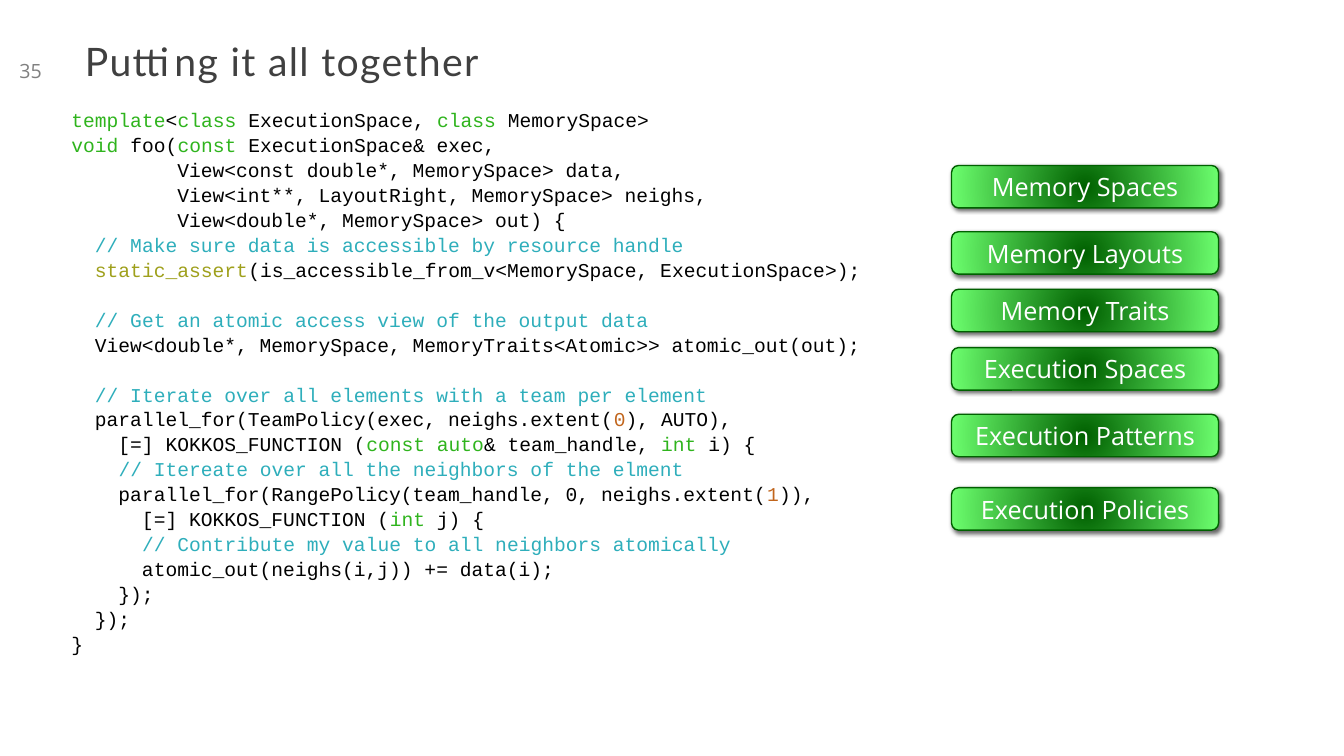
from dataclasses import dataclass

from lxml import etree
from pptx import Presentation
from pptx.dml.color import RGBColor
from pptx.enum.shapes import MSO_SHAPE
from pptx.enum.text import MSO_ANCHOR, PP_ALIGN
from pptx.oxml import parse_xml
from pptx.oxml.ns import nsdecls, qn
from pptx.util import Cm, Pt

ROUNDED = MSO_SHAPE.ROUNDED_RECTANGLE
TOP, MIDDLE = MSO_ANCHOR.TOP, MSO_ANCHOR.MIDDLE
LEFT, CENTER = PP_ALIGN.LEFT, PP_ALIGN.CENTER


@dataclass(frozen=True)
class Theme:
    title_font: str = "Lato"
    body_font: str = "Open Sans"
    code_font: str = "Courier New"
    title_size: int = 28
    topic_size: int = 18
    small_size: int = 14
    title: str = "404040"
    number: str = "808080"
    plain: str = "000000"
    keyword: str = "2FB41D"
    comment: str = "2EAEBB"
    assertion: str = "9FA01C"
    literal: str = "C1651C"
    topic_text: str = "FFFFFF"
    topic_dark: str = "006000"
    topic_light: str = "6DFF6F"


def keyword(text):
    return text, "keyword"


def comment(text):
    return text, "comment"


def literal(text):
    return text, "literal"


# A line is a list of plain strings and (text, colour role) pairs; "\n" is a line break.
CODE = [
    [keyword("template"), "<", keyword("class "), "ExecutionSpace, ",
     keyword("class "), "MemorySpace>"],
    [keyword("void"), " foo(", keyword("const "), "ExecutionSpace& exec,"],
    ["         View<const double*, MemorySpace> data,"],
    ["         View<int**, LayoutRight, MemorySpace> neighs,"],
    ["         View<double*, MemorySpace> out) {"],
    ["  ", comment("// Make sure data is accessible by resource handle")],
    ["  ", ("static_assert", "assertion"),
     "(is_accessible_from_v<MemorySpace, ExecutionSpace>);", "\n"],
    ["  ", comment("// Get an atomic access view of the output data")],
    ["  View<double*, MemorySpace, MemoryTraits<Atomic>> atomic_out(out);", "\n"],
    ["  ", comment("// Iterate over all elements with a team per element")],
    ["  parallel_for(TeamPolicy(exec, neighs.extent(", literal("0"), "), AUTO),"],
    ["    [=] KOKKOS_FUNCTION (", keyword("const auto"), "& team_handle, ",
     keyword("int "), "i) {"],
    ["    ", comment("// Itereate over all the neighbors of the elment")],
    ["    parallel_for(RangePolicy(team_handle, 0, neighs.extent(", literal("1"), ")),"],
    ["      [=] KOKKOS_FUNCTION (", keyword("int"), " j) {"],
    ["      ", comment("// Contribute my value to all neighbors atomically")],
    ["      atomic_out(neighs(i,j)) += data(i);"],
    ["    });"],
    ["  });"],
    ["}"],
]

TOPIC_TOPS = {
    "Memory Spaces": 4.17,
    "Memory Layouts": 5.84,
    "Memory Traits": 7.29,
    "Execution Spaces": 8.76,
    "Execution Patterns": 10.44,
    "Execution Policies": 12.29,
}


class SlideBuilder:
    def __init__(self, slide, theme):
        self.slide = slide
        self.theme = theme

    def style(self, font, face, size, color):
        font.name = face
        font.size = Pt(size)
        font.color.rgb = RGBColor.from_string(color)

    def frame(self, left, top, width, height, anchor=TOP):
        box = self.slide.shapes.add_textbox(Cm(left), Cm(top), Cm(width), Cm(height))
        frame = box.text_frame
        frame.word_wrap = True
        frame.vertical_anchor = anchor
        return frame

    def label(self, text, place, face, size, color, anchor=TOP, align=LEFT):
        frame = self.frame(*place, anchor)
        frame.margin_left = frame.margin_right = Cm(0.13)
        frame.text = text
        paragraph = frame.paragraphs[0]
        paragraph.alignment = align
        self.style(paragraph.runs[0].font, face, size, color)
        return paragraph

    def title(self, text):
        theme = self.theme
        heading = self.label(text, (2.01, 0.99, 29.11, 1.57),
                             theme.title_font, theme.title_size, theme.title)
        heading.line_spacing = 0.85
        heading.runs[0].font._element.set("spc", "100")

    def page_number(self, text):
        theme = self.theme
        self.label(text, (0, 0.99, 1.55, 1.57), theme.body_font, theme.small_size,
                   theme.number, MIDDLE, CENTER)

    def code(self, lines):
        theme = self.theme
        frame = self.frame(1.55, 2.57, 35.26, 13.41)
        for index, line in enumerate(lines):
            paragraph = frame.paragraphs[0] if index == 0 else frame.add_paragraph()
            paragraph.line_spacing = 1.06
            self.style(paragraph.font, theme.code_font, theme.small_size, theme.plain)
            for part in line:
                if part == "\n":
                    paragraph.add_line_break()
                    continue
                text, role = (part, "plain") if isinstance(part, str) else part
                run = paragraph.add_run()
                run.text = text
                self.style(run.font, theme.code_font, theme.small_size,
                           getattr(theme, role))

    def topic(self, text, top):
        theme = self.theme
        button = self.slide.shapes.add_shape(ROUNDED, Cm(23.98), Cm(top), Cm(6.73), Cm(1.07))
        button.line.color.rgb = RGBColor.from_string(theme.topic_dark)
        button.line.width = Pt(1)
        self.glow_from_center(button)
        self.drop_shadow(button)
        frame = button.text_frame
        frame.text = text
        frame.vertical_anchor = MIDDLE
        paragraph = frame.paragraphs[0]
        paragraph.alignment = CENTER
        self.style(paragraph.runs[0].font, theme.body_font, theme.topic_size,
                   theme.topic_text)

    def glow_from_center(self, button):
        """Fill with a circular gradient, dark in the middle."""
        button.fill.gradient()
        colors = (self.theme.topic_dark, self.theme.topic_light)
        for stop, color in zip(button.fill.gradient_stops, colors):
            stop.color.rgb = RGBColor.from_string(color)
        gradient = button._element.spPr.find(qn("a:gradFill"))
        circle = parse_xml(
            f'<a:path {nsdecls("a")} path="circle">'
            '<a:fillToRect l="50000" t="50000" r="50000" b="50000"/></a:path>')
        gradient.replace(gradient.find(qn("a:lin")), circle)

    def drop_shadow(self, button):
        button.shadow.inherit = False
        effects = button._element.spPr.find(qn("a:effectLst"))
        shadow = etree.SubElement(effects, qn("a:outerShdw"), blurRad=str(Pt(3)),
                                  dist=str(Pt(2)), dir="2700000", rotWithShape="0")
        color = etree.SubElement(shadow, qn("a:srgbClr"), val=self.theme.plain)
        etree.SubElement(color, qn("a:alpha"), val="60000")


def main():
    deck = Presentation()
    deck.slide_width, deck.slide_height = Cm(33.87), Cm(19.05)
    builder = SlideBuilder(deck.slides.add_slide(deck.slide_layouts[6]), Theme())
    builder.title("Putting it all together")
    builder.page_number("35")
    builder.code(CODE)
    for topic, top in TOPIC_TOPS.items():
        builder.topic(topic, top)
    deck.save("out.pptx")


if __name__ == "__main__":
    main()
